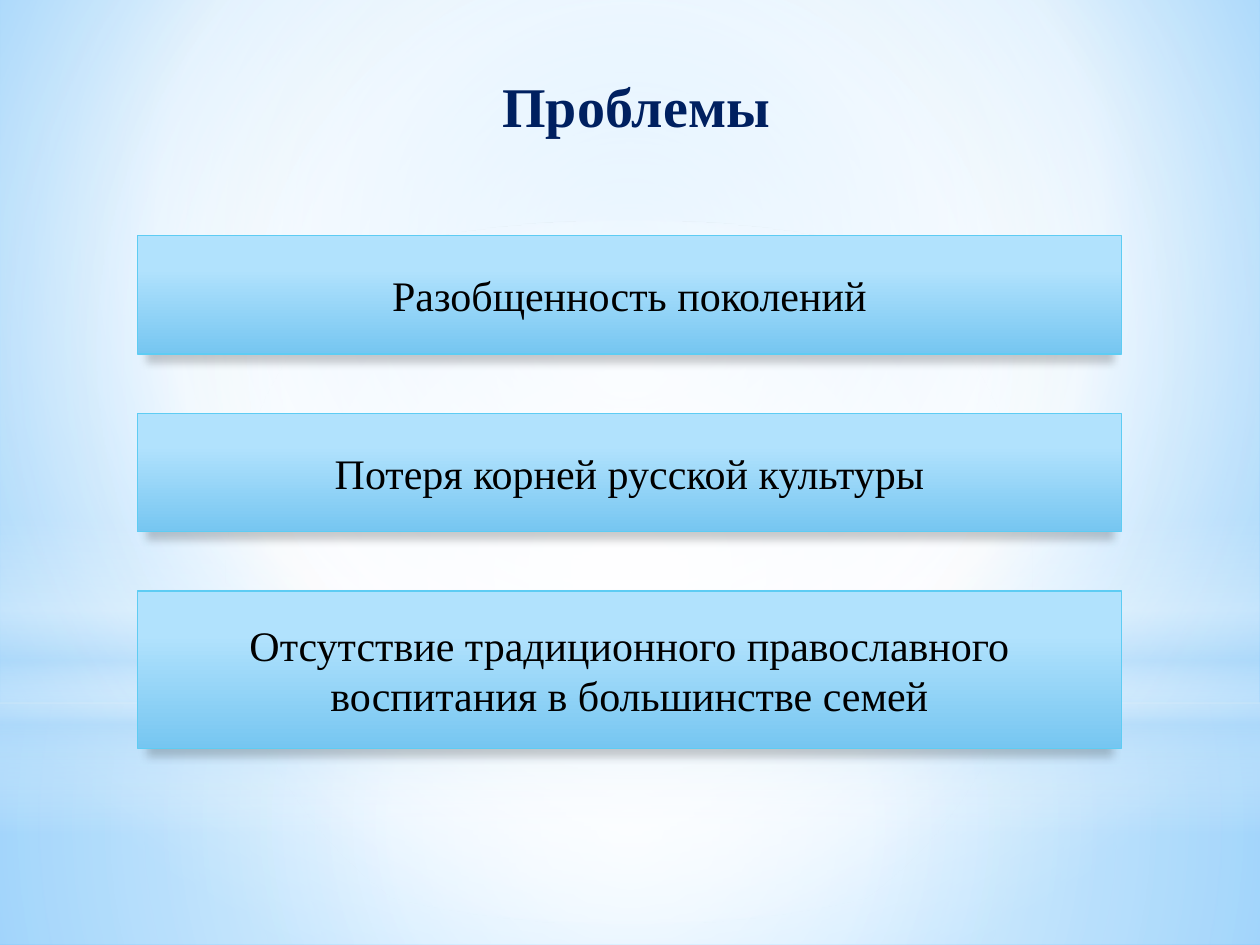
from lxml.etree import SubElement
from pptx import Presentation
from pptx.dml.color import RGBColor
from pptx.enum.shapes import MSO_SHAPE as Shape
from pptx.enum.text import MSO_ANCHOR as Anchor, PP_ALIGN as Align
from pptx.oxml.ns import qn
from pptx.util import Inches, Pt

# Content
TITLE = "Проблемы"
PROBLEMS = [  # text, card height
    ("Разобщенность поколений", 0.94),
    ("Потеря корней русской культуры", 0.94),
    ("Отсутствие традиционного православного воспитания в большинстве семей", 1.25),
]

# Theme: gradient stops are position, colour, opacity
THEME = {
    "font": "Times New Roman",
    "title": ("002060", 32),
    "body": ("000000", 24),
    "border": "5ECCF3",
    "card": [(28, "B1E2FD", 100), (100, "76C6F1", 100)],
    "backdrop": [(0, "9ED5FF", 100), (60, "FFFFFF", 100), (100, "5BB9FF", 100)],
    "floor": [(0, "FFFFFF", 91), (37, "FFFFFF", 76), (100, "B4DCFA", 79)],
    "sky": [(0, "FFFFFF", 89), (48, "FFFFFF", 62), (100, "B4DCFA", 79)],
    "horizon": [(0, "FFFFFF", 0), (29, "FFFFFF", 30), (45, "B4DCFA", 40),
                (55, "FFFFFF", 26), (65, "B4DCFA", 60), (100, "FFFFFF", 0)],
    "glow": [(0, "FFFFFF", 100), (56, "FFFFFF", 0)],
}
CENTRE = (50, 50, 50, 50)
DECOR = [  # outline, top, height, gradient, focus (None for top to bottom)
    (Shape.RECTANGLE, 5.58, 1.92, "floor", CENTRE),
    (Shape.RECTANGLE, 0, 5.58, "sky", CENTRE),
    (Shape.RECTANGLE, 4.12, 2.5, "horizon", None),
    (Shape.OVAL, 1.75, 5.58, "glow", CENTRE),
]
SLIDE_W, SLIDE_H = 10, 7.5
CARD_LEFT, CARD_TOP, CARD_W, CARD_GAP = 1.09, 1.87, 7.81, 0.47


def add_colour(parent, colour, opacity):
    node = SubElement(parent, qn("a:srgbClr"), val=colour)
    if opacity < 100:
        SubElement(node, qn("a:alpha"), val=str(opacity * 1000))


def set_gradient(owner, fill, stops, focus=None):
    fill.gradient()
    gradient = next(owner.iter(qn("a:gradFill")))
    for child in list(gradient):
        gradient.remove(child)
    stop_list = SubElement(gradient, qn("a:gsLst"))
    for position, colour, opacity in stops:
        stop = SubElement(stop_list, qn("a:gs"), pos=str(position * 1000))
        add_colour(stop, colour, opacity)
    if focus:
        radial = SubElement(gradient, qn("a:path"), {"path": "circle"})
        SubElement(radial, qn("a:fillToRect"),
                   {side: str(share * 1000) for side, share in zip("ltrb", focus)})
    else:
        SubElement(gradient, qn("a:lin"), ang="5400000", scaled="0")


def add_panel(slide, outline, box, stops, focus=None):
    panel = slide.shapes.add_shape(outline, *map(Inches, box))
    panel.shadow.inherit = False
    set_gradient(panel._element.spPr, panel.fill, stops, focus)
    panel.line.fill.background()
    return panel


def add_shadow(card):
    effects = card._element.spPr.find(qn("a:effectLst"))
    shadow = SubElement(effects, qn("a:outerShdw"), blurRad=str(Pt(5)), dist=str(Pt(4)),
                        dir="5400000", sx="98000", algn="ctr", rotWithShape="0")
    add_colour(shadow, "000000", 20)


def write(frame, text, style, anchor, bold=False):
    frame.word_wrap = True
    frame.vertical_anchor = anchor
    paragraph = frame.paragraphs[0]
    paragraph.alignment = Align.CENTER
    run = paragraph.add_run()
    run.text = text
    colour, size = THEME[style]
    run.font.name, run.font.size, run.font.bold = THEME["font"], Pt(size), bold
    run.font.color.rgb = RGBColor.from_string(colour)


def main():
    deck = Presentation()
    deck.slide_width, deck.slide_height = Inches(SLIDE_W), Inches(SLIDE_H)
    slide = deck.slides.add_slide(deck.slide_layouts[5])

    # Backdrop
    set_gradient(slide.background._cSld, slide.background.fill,
                 THEME["backdrop"], (20, 10, 20, 60))
    for outline, top, height, stops, focus in DECOR:
        add_panel(slide, outline, (0, top, SLIDE_W, height), THEME[stops], focus)

    # Problem cards
    top = CARD_TOP
    for problem, height in PROBLEMS:
        card = add_panel(slide, Shape.RECTANGLE, (CARD_LEFT, top, CARD_W, height), THEME["card"])
        card.line.color.rgb = RGBColor.from_string(THEME["border"])
        card.line.width = Pt(0.75)
        add_shadow(card)
        write(card.text_frame, problem, "body", Anchor.MIDDLE)
        top += height + CARD_GAP

    # Title, brought in front of the backdrop
    title = slide.shapes.title
    title.left, title.top, title.width, title.height = map(Inches, (0.55, 0.52, 9, 0.96))
    write(title.text_frame, TITLE, "title", Anchor.TOP, bold=True)
    slide.shapes._spTree.append(title._element)

    deck.save("out.pptx")


if __name__ == "__main__":
    main()
